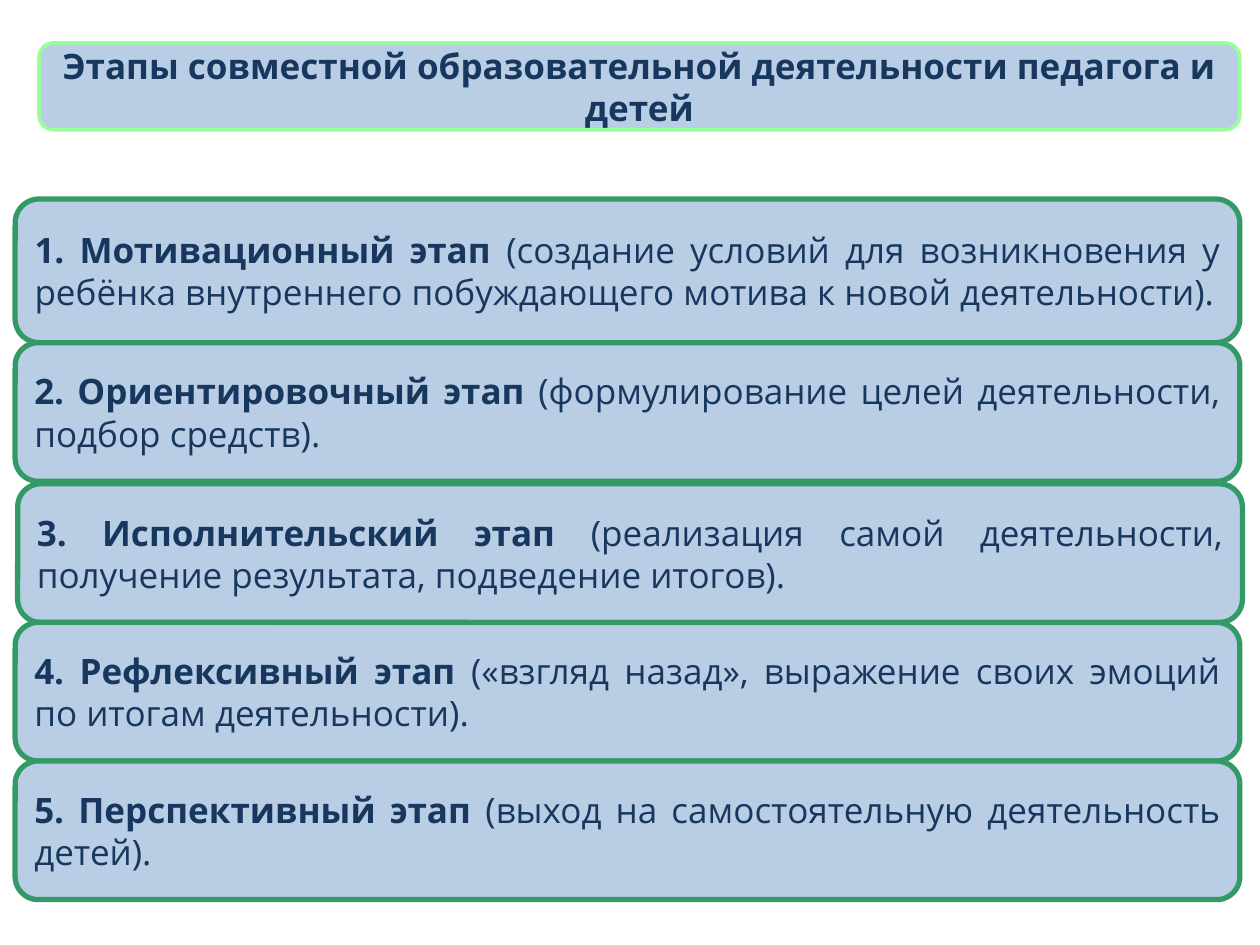
from dataclasses import dataclass

from pptx import Presentation
from pptx.dml.color import RGBColor
from pptx.enum.shapes import MSO_SHAPE as Shape
from pptx.enum.text import MSO_ANCHOR as Anchor, PP_ALIGN as Align
from pptx.util import Inches, Pt


@dataclass(frozen=True)
class Theme:
    font: str = "Open Sans"
    size: Pt = Pt(20)
    text: RGBColor = RGBColor(0x17, 0x37, 0x5E)
    fill: RGBColor = RGBColor(0xB9, 0xCD, 0xE5)
    title_line: RGBColor = RGBColor(0x99, 0xFF, 0x99)
    stage_line: RGBColor = RGBColor(0x33, 0x99, 0x66)
    title_width: Pt = Pt(2)
    stage_width: Pt = Pt(3)


@dataclass(frozen=True)
class Stage:
    name: str
    detail: str
    top: float
    left: float = 0.12
    height: float = 1.1


THEME = Theme()
TITLE = "Этапы совместной образовательной деятельности педагога и детей"
STAGES = [
    Stage("Мотивационный этап",
          "(создание условий для возникновения у ребёнка внутреннего "
          "побуждающего мотива к новой деятельности).", 1.58, height=1.14),
    Stage("Ориентировочный этап",
          "(формулирование целей деятельности, подбор средств).", 2.72),
    Stage("Исполнительский этап",
          "(реализация самой деятельности, получение результата, "
          "подведение итогов).", 3.84, left=0.14),
    Stage("Рефлексивный этап",
          "(«взгляд назад», выражение своих эмоций по итогам деятельности).",
          4.94),
    Stage("Перспективный этап",
          "(выход на самостоятельную деятельность детей).", 6.04),
]


def add_panel(slide, left: float, top: float, width: float, height: float,
              line: RGBColor, line_width: Pt, align: Align):
    sp = slide.shapes.add_shape(Shape.ROUNDED_RECTANGLE, Inches(left),
                                Inches(top), Inches(width), Inches(height))
    sp.shadow.inherit = False
    sp.fill.solid()
    sp.fill.fore_color.rgb = THEME.fill
    sp.line.color.rgb = line
    sp.line.width = line_width
    tf = sp.text_frame
    tf.word_wrap = True
    tf.vertical_anchor = Anchor.MIDDLE
    p = tf.paragraphs[0]
    p.alignment = align
    p.font.name = THEME.font
    p.font.size = THEME.size
    p.font.color.rgb = THEME.text
    return p


def add_run(p, text: str, bold: bool) -> None:
    r = p.add_run()
    r.text = text
    r.font.bold = bold


def add_stage(slide, number: int, stage: Stage) -> None:
    p = add_panel(slide, stage.left, stage.top, 9.72, stage.height,
                  THEME.stage_line, THEME.stage_width, Align.JUSTIFY)
    add_run(p, f"{number}. {stage.name} ", True)
    add_run(p, stage.detail, False)


def add_title(slide) -> None:
    p = add_panel(slide, 0.31, 0.34, 9.53, 0.69,
                  THEME.title_line, THEME.title_width, Align.CENTER)
    p.font.bold = True
    p.add_run().text = TITLE


def main() -> None:
    prs = Presentation()
    prs.slide_width, prs.slide_height = Inches(10), Inches(7.5)
    s = prs.slides.add_slide(prs.slide_layouts[6])
    for number, stage in enumerate(STAGES, 1):
        add_stage(s, number, stage)
    add_title(s)
    prs.save("out.pptx")


if __name__ == "__main__":
    main()
